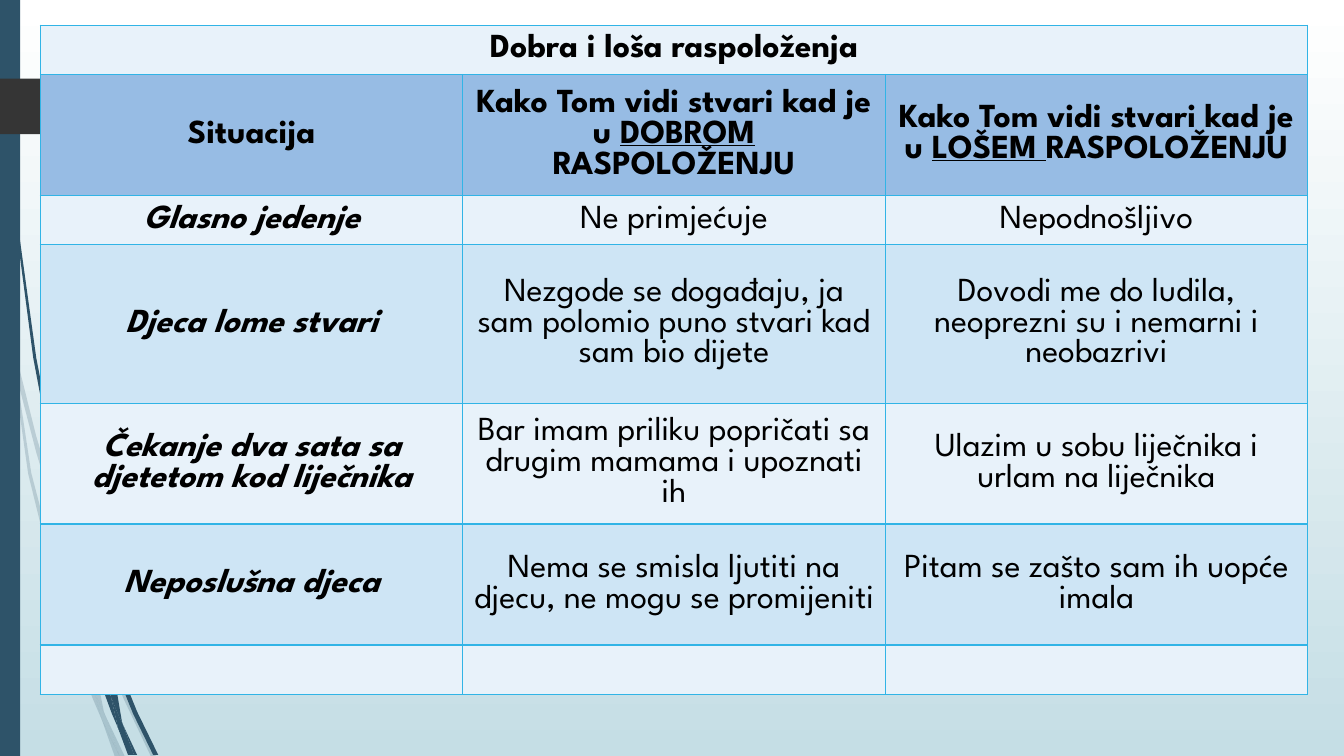
from dataclasses import dataclass

from lxml import etree
from pptx import Presentation
from pptx.dml.color import RGBColor
from pptx.enum.shapes import MSO_SHAPE
from pptx.enum.text import MSO_ANCHOR, PP_ALIGN
from pptx.oxml.ns import qn
from pptx.util import Emu, Pt

RECTANGLE = MSO_SHAPE.RECTANGLE
PENTAGON = MSO_SHAPE.PENTAGON
CENTER = PP_ALIGN.CENTER
MIDDLE = MSO_ANCHOR.MIDDLE

PX = 9144  # 100 px to the inch
FONT = "League Spartan"
NAVY, CHARCOAL, BLACK = "2E5369", "353535", "000000"
BORDER, HEADER, PALE, BAND = "31B4E6", "97BCE4", "E8F2FA", "CEE5F5"


@dataclass(frozen=True)
class Wisp:
    points: tuple[tuple[int, int], ...]
    opacity: int = 100


@dataclass(frozen=True)
class Run:
    text: str
    bold: bool = False
    italic: bool = False
    underline: bool = False


@dataclass(frozen=True)
class Row:
    height: int
    fill: str
    cells: tuple[tuple[Run, ...], ...]


def header(before: str, underlined: str, after: str) -> tuple[Run, ...]:
    return Run(before, True), Run(underlined, True, underline=True), Run(after, True)


def situation(height: int, fill: str, name: str, good: str, bad: str) -> Row:
    return Row(height, fill, ((Run(name, True, True),), (Run(good),), (Run(bad),)))


WISPS = (
    Wisp(((58, 522), (84, 599), (85, 586), (62, 520), (36, 433), (14, 345),
          (17, 376), (36, 449)), 20),
    Wisp(((92, 607), (88, 596), (88, 610), (123, 694), (150, 751), (155, 751),
          (127, 692)), 20),
    Wisp(((119, 751), (124, 751), (105, 711)), 20),
    Wisp(((93, 683), (70, 619), (31, 469), (17, 376), (11, 350), (28, 470),
          (65, 621), (92, 693), (101, 714), (99, 707)), 20),
    Wisp(((84, 599), (87, 646), (93, 683), (96, 692), (105, 711), (103, 706),
          (91, 646), (88, 610), (88, 608)), 20),
    Wisp(((101, 714), (114, 751), (119, 751)), 20),
    Wisp(((96, 692), (93, 683), (99, 707), (101, 714), (119, 751), (105, 711)), 20),
    Wisp(((7, 110), (17, 233), (33, 355), (56, 477), (57, 481), (55, 457),
          (55, 453), (36, 355), (19, 232), (8, 109), (5, 48), (4, 0), (3, 0), (4, 48))),
    Wisp(((113, 649), (110, 641), (111, 656), (132, 708), (152, 749), (157, 749),
          (136, 706))),
    Wisp(((110, 691), (98, 657), (72, 556), (64, 505), (57, 477), (68, 557),
          (93, 659), (111, 708), (117, 722), (116, 717))),
    Wisp(((133, 749), (136, 749), (122, 719))),
    Wisp(((117, 722), (127, 749), (131, 749))),
    Wisp(((106, 645), (110, 691), (116, 706), (122, 719), (121, 716), (111, 656),
          (109, 651))),
    Wisp(((116, 706), (110, 691), (116, 717), (117, 722), (130, 749), (133, 749),
          (122, 719))),
)

QUESTION = "Kako Tom vidi stvari kad je u "
ROWS = (
    Row(49, PALE, ((Run("Dobra i loša raspoloženja", True),), (), ())),
    Row(120, HEADER, ((Run("Situacija", True),),
                      header(QUESTION, "DOBROM", " RASPOLOŽENJU"),
                      header(QUESTION, "LOŠEM ", "RASPOLOŽENJU"))),
    situation(49, PALE, "Glasno jedenje", "Ne primjećuje", "Nepodnošljivo"),
    situation(157, BAND, "Djeca lome stvari",
              "Nezgode se događaju, ja sam polomio puno stvari kad sam bio dijete",
              "Dovodi me do ludila, neoprezni su i nemarni i neobazrivi"),
    situation(120, PALE, "Čekanje dva sata sa djetetom kod liječnika",
              "Bar imam priliku popričati sa drugim mamama i upoznati ih",
              "Ulazim u sobu liječnika i urlam na liječnika"),
    situation(120, BAND, "Neposlušna djeca",
              "Nema se smisla ljutiti na djecu, ne mogu se promijeniti",
              "Pitam se zašto sam ih uopće imala"),
    Row(49, PALE, ((), (), ())),
)


def px(n: int) -> Emu:
    return Emu(n * PX)


def rgb(color: str) -> RGBColor:
    return RGBColor.from_string(color)


def paint(sp, color: str, opacity: int = 100) -> None:
    sp.shadow.inherit = False
    sp.fill.solid()
    sp.fill.fore_color.rgb = rgb(color)
    sp.line.fill.background()
    if opacity < 100:
        clr = sp.element.spPr.find(qn("a:solidFill")).find(qn("a:srgbClr"))
        etree.SubElement(clr, qn("a:alpha"), val=str(opacity * 1000))


def add_wisp(slide, wisp: Wisp) -> None:
    builder = slide.shapes.build_freeform(*wisp.points[0], scale=PX)
    builder.add_line_segments(wisp.points[1:], close=True)
    paint(builder.convert_to_shape(), NAVY, wisp.opacity)


def add_block(slide, kind, x: int, y: int, w: int, h: int, color: str):
    sp = slide.shapes.add_shape(kind, px(x), px(y), px(w), px(h))
    paint(sp, color)
    return sp


def add_borders(cell) -> None:
    tc_pr = cell._tc.get_or_add_tcPr()
    for i, side in enumerate(("lnL", "lnR", "lnT", "lnB")):
        ln = etree.Element(qn(f"a:{side}"), w=str(Pt(1)))
        fill = etree.SubElement(ln, qn("a:solidFill"))
        etree.SubElement(fill, qn("a:srgbClr"), val=BORDER)
        tc_pr.insert(i, ln)


def fill_cell(cell, runs: tuple[Run, ...], color: str) -> None:
    cell.fill.solid()
    cell.fill.fore_color.rgb = rgb(color)
    cell.vertical_anchor = MIDDLE
    add_borders(cell)
    p = cell.text_frame.paragraphs[0]
    p.alignment = CENTER
    for run in runs:
        r = p.add_run()
        r.text = run.text
        r.font.name, r.font.size = FONT, Pt(24)
        r.font.bold, r.font.italic, r.font.underline = run.bold, run.italic, run.underline
        r.font.color.rgb = rgb(BLACK)


def add_mood_table(slide) -> None:
    height = sum(row.height for row in ROWS)
    table = slide.shapes.add_table(len(ROWS), 3, px(40), px(25), px(1257), px(height)).table
    table.first_row = table.horz_banding = False
    for column in table.columns:
        column.width = px(419)
    for i, row in enumerate(ROWS):
        table.rows[i].height = px(row.height)
        for j, runs in enumerate(row.cells):
            fill_cell(table.cell(i, j), runs, row.fill)
    table.cell(0, 0).merge(table.cell(0, 2))


def set_background(slide) -> None:
    fill = slide.background.fill
    fill.gradient()
    fill.gradient_angle = 270
    for stop, color in zip(fill.gradient_stops, ("FFFFFF", "C5DEE5")):
        stop.color.rgb = rgb(color)


def main() -> None:
    prs = Presentation()
    prs.slide_width, prs.slide_height = px(1333), px(750)
    slide = prs.slides.add_slide(prs.slide_layouts[6])
    set_background(slide)
    for wisp in WISPS:
        add_wisp(slide, wisp)
    add_block(slide, RECTANGLE, 0, 0, 20, 750, NAVY)
    tag = add_block(slide, PENTAGON, 0, 78, 174, 55, CHARCOAL)
    tag.adjustments[0] = 0.45
    add_mood_table(slide)
    prs.save("out.pptx")


if __name__ == "__main__":
    main()
